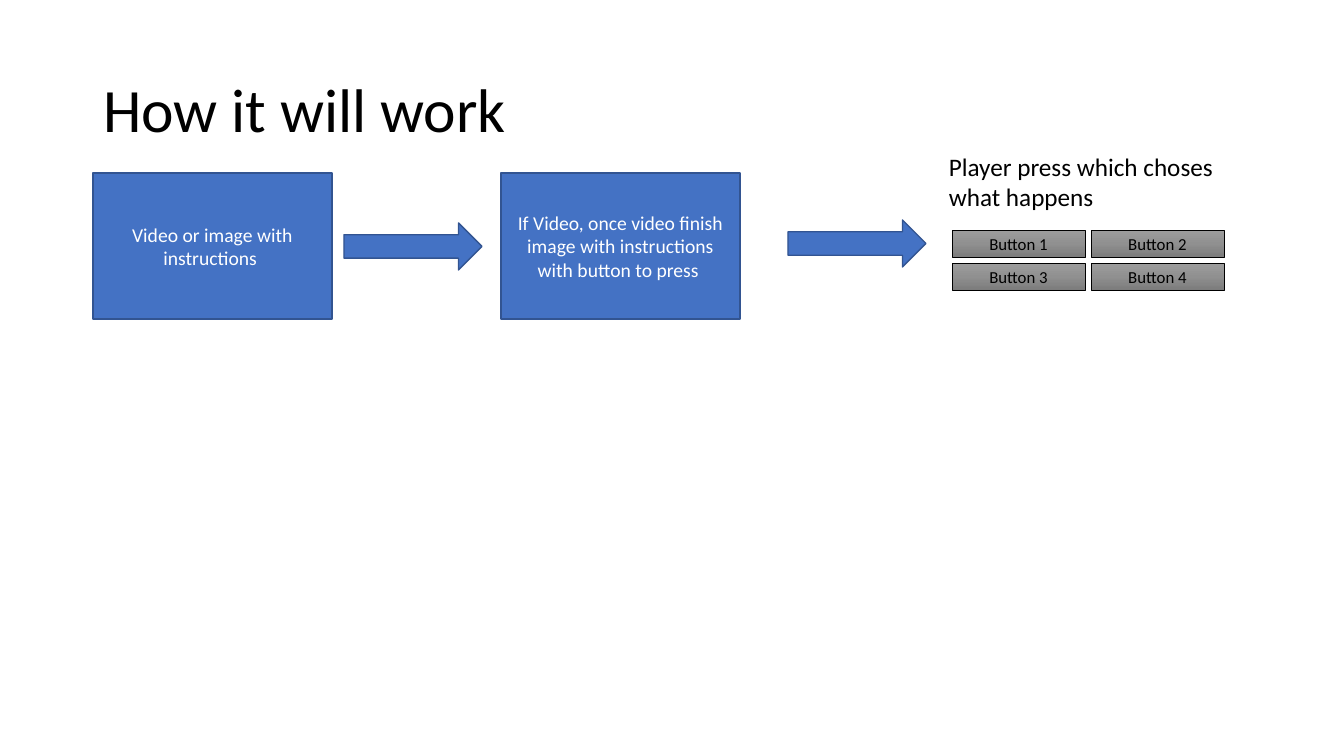
from copy import deepcopy
from dataclasses import dataclass

from pptx import Presentation
from pptx.dml.color import RGBColor
from pptx.enum import shapes, text
from pptx.oxml.ns import qn
from pptx.util import Emu, Pt

EMU_PER_PX = 914400 / 100.8


@dataclass(frozen=True)
class Theme:
    font: str = "Calibri"
    ink: str = "000000"
    paper: str = "FFFFFF"
    blue: str = "4472C4"
    blue_edge: str = "325491"
    button_shades: tuple = ("9D9D9D", "909090", "7C7C7C")
    title_size: int = 44
    caption_size: int = 18
    step_size: int = 14
    button_size: int = 12


THEME = Theme()


def px(*lengths):
    return [Emu(round(length * EMU_PER_PX)) for length in lengths]


def write(frame, words, size, color=THEME.ink, align=text.PP_ALIGN.LEFT,
          anchor=text.MSO_ANCHOR.MIDDLE, spacing=None):
    frame.word_wrap = True
    frame.vertical_anchor = anchor
    paragraph = frame.paragraphs[0]
    paragraph.alignment = align
    paragraph.line_spacing = spacing
    run = paragraph.add_run()
    run.text = words
    run.font.name = THEME.font
    run.font.size = Pt(size)
    run.font.color.rgb = RGBColor.from_string(color)


def add_block(slide, preset, box, edge=THEME.blue_edge, edge_width=1):
    block = slide.shapes.add_shape(preset, *px(*box))
    block.shadow.inherit = False
    block.fill.solid()
    block.fill.fore_color.rgb = RGBColor.from_string(THEME.blue)
    block.line.color.rgb = RGBColor.from_string(edge)
    block.line.width = Pt(edge_width)
    return block


def add_step(slide, left, words):
    step = add_block(slide, shapes.MSO_SHAPE.RECTANGLE, (left, 173, 239, 146))
    write(step.text_frame, words, THEME.step_size, color=THEME.paper,
          align=text.PP_ALIGN.CENTER)


def add_arrow(slide, left, top):
    add_block(slide, shapes.MSO_SHAPE.RIGHT_ARROW, (left, top, 138, 47))


def shade(button):
    button.fill.gradient()
    button.fill.gradient_angle = 270
    stop_list = button._element.spPr.find(".//" + qn("a:gsLst"))
    stop_list.insert(1, deepcopy(stop_list[0]))
    for index, color in enumerate(THEME.button_shades):
        stop = button.fill.gradient_stops[index]
        stop.position = index / 2
        stop.color.rgb = RGBColor.from_string(color)


def add_button(slide, number):
    row, column = divmod(number - 1, 2)
    box = (952 + 139 * column, 230 + 33 * row, 133, 27)
    button = add_block(slide, shapes.MSO_SHAPE.RECTANGLE, box,
                       edge=THEME.ink, edge_width=0.5)
    shade(button)
    write(button.text_frame, f"Button {number}", THEME.button_size,
          align=text.PP_ALIGN.CENTER)


def add_title(slide, words):
    title = slide.shapes.title
    title.left, title.top, title.width, title.height = px(93, 40, 1159, 146)
    title.text_frame.auto_size = text.MSO_AUTO_SIZE.NONE
    write(title.text_frame, words, THEME.title_size, spacing=0.9)


def add_caption(slide, words):
    caption = slide.shapes.add_textbox(*px(939, 146, 332, 72))
    caption.text_frame.auto_size = text.MSO_AUTO_SIZE.SHAPE_TO_FIT_TEXT
    write(caption.text_frame, words, THEME.caption_size,
          anchor=text.MSO_ANCHOR.TOP)


def main():
    deck = Presentation()
    deck.slide_width, deck.slide_height = px(1344, 756)
    slide = deck.slides.add_slide(deck.slide_layouts[5])
    add_title(slide, "How it will work")
    add_step(slide, 93, "Video or image with instructions ")
    add_arrow(slide, 344, 223)
    add_step(slide, 501, "If Video, once video finish image with "
                         "instructions with button to press ")
    for number in range(1, 5):
        add_button(slide, number)
    add_arrow(slide, 788, 220)
    add_caption(slide, "Player press which choses what happens")
    deck.save("out.pptx")


if __name__ == "__main__":
    main()
